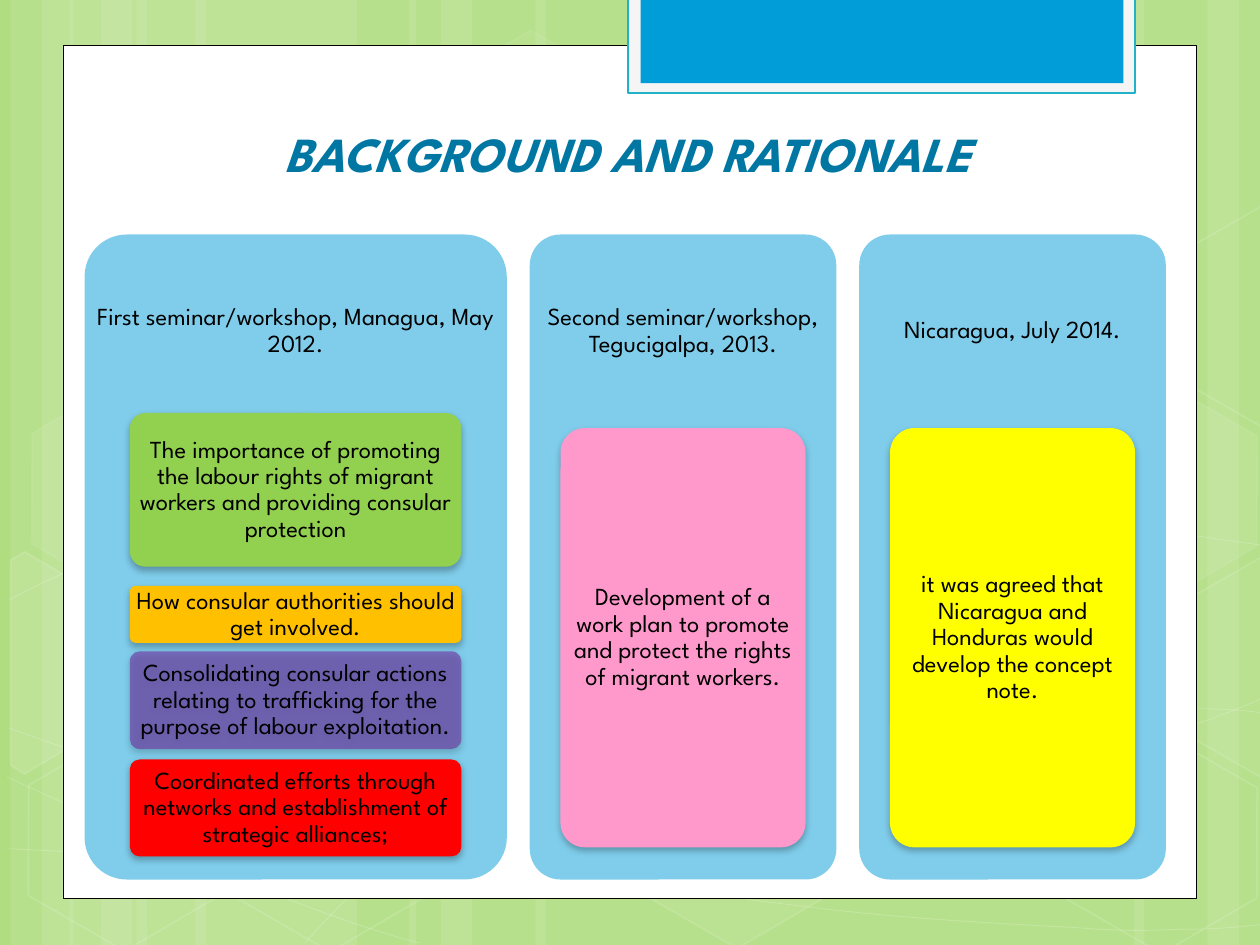
"""Build the background and rationale slide."""
from math import cos, radians, sin
from lxml.etree import SubElement
from pptx import Presentation
from pptx.dml.color import RGBColor
from pptx.enum.shapes import MSO_SHAPE
from pptx.enum.text import MSO_ANCHOR, PP_ALIGN
from pptx.oxml.ns import qn
from pptx.util import Pt

FONT = "League Spartan"
HUES = {
    "page": "AFDD7F", "white": "FFFFFF", "black": "000000", "pale": "F5F5F5",
    "teal": "21B2C9", "blue": "009DD9", "title": "0076A3", "green": "92D050",
    "gold": "FFC000", "plum": "7030A0", "red": "FF0000", "pink": "FF99CC",
    "lemon": "FFFF00",
}
TILT = 30
BANDS = [(78, 126), (6, 36), (24, 60), (111.6, 126), (39.6, 36), (57.6, 60),
         (528, 126), (690, 36), (648, 60), (306, 222), (234, 36), (252, 60)]
CURVES = [
    [(5, 485), (44, 487), (83, 489), (137, 488), (191, 487), (258, 486), (330, 479),
     (402, 472), (504, 458), (570, 444), (636, 431), (703, 409), (725, 397)],
    [(5, 343), (26, 332), (47, 321), (87, 310), (128, 300), (186, 284), (250, 279),
     (314, 274), (392, 273), (471, 279), (550, 284), (682, 307), (725, 312)],
    [(4, 444), (91, 484), (178, 523), (240, 539)],
    [(5, 416), (27, 424), (50, 432), (92, 444), (134, 454), (197, 472), (257, 485),
     (317, 497), (392, 510), (452, 517), (512, 525), (576, 528), (614, 530),
     (652, 533), (662, 531), (680, 531), (699, 531), (712, 529), (725, 528)],
    [(174, 539), (187, 525), (200, 510), (217, 498), (235, 485), (259, 471), (279, 460),
     (300, 450), (312, 446), (338, 438), (364, 431), (413, 421), (438, 416),
     (464, 411), (467, 411), (490, 410), (512, 407), (547, 405), (572, 405),
     (597, 404), (638, 405), (638, 405), (654, 405), (670, 405), (686, 405),
     (699, 405), (711, 406), (718, 407), (722, 408), (724, 407), (724, 408)],
]
HEXES = [(240.5, 26, 4, 8), (358, 424, 6, 12), (8, 425.5, 0, 12), (10, 224.5, 7, 8),
         (125.5, 426, 0, 12), (542, 326, 10, 12), (600.5, 427, 0, 12), (600.5, 226, 7, 8)]
LEFT = [(6, 320), (14, 315), (69, 347), (68, 410), (14, 442), (6, 437)]
RIGHT = [(667, 349), (721, 318), (726, 321), (726, 441), (721, 444), (667, 413)]
CHIPS = [(LEFT, (25.9, 385.2), 0, 10), (RIGHT, (709.2, 374.4), 0, 4),
         (RIGHT, (709.2, 374.4), 200.5, 0)]
COLS = [
    ("First seminar/workshop, Managua, May 2012.", 241.3, 189.4, [
        (236, 87.8, "green", 100, "The importance of promoting the labour rights of "
         "migrant workers and providing consular protection"),
        (334.8, 32.6, "gold", 100, "How consular authorities should get involved."),
        (372.2, 55.8, "plum", 60, "Consolidating consular actions relating to "
         "trafficking for the purpose of labour exploitation."),
        (434, 55.4, "red", 100, "Coordinated efforts through networks and "
         "establishment of strategic alliances;")]),
    ("Second seminar/workshop, Tegucigalpa, 2013.", 175.2, 140, [
        (244.6, 239.6, "pink", 100, "Development of a work plan to promote and "
         "protect the rights of migrant workers.")]),
    ("Nicaragua, July 2014.", 175.2, 140, [
        (244.6, 239.6, "lemon", 100, "it was agreed that Nicaragua and Honduras "
         "would develop the concept note.")]),
]


def tint(fill, node, hue, alpha):
    fill.solid()
    fill.fore_color.rgb = RGBColor.from_string(HUES[hue])
    if alpha < 100:
        clr = node.find(qn("a:solidFill")).find(qn("a:srgbClr"))
        SubElement(clr, qn("a:alpha"), val=str(alpha * 1000))


def paint(shape, hue, alpha=100, edge=None, width=0.5, fade=100):
    shape.shadow.inherit = False
    props = shape.element.spPr
    if hue and alpha:
        tint(shape.fill, props, hue, alpha)
    else:
        shape.fill.background()
    if edge:
        shape.line.width = Pt(width)
        tint(shape.line.fill, props.find(qn("a:ln")), edge, fade)
    else:
        shape.line.fill.background()


def add(slide, kind, box, *style):
    shape = slide.shapes.add_shape(kind, *map(Pt, box))
    paint(shape, *style)
    return shape


def trace(slide, pts, closed, *style):
    pen = slide.shapes.build_freeform(Pt(pts[0][0]), Pt(pts[0][1]))
    pen.add_line_segments([(Pt(x), Pt(y)) for x, y in pts[1:]], close=closed)
    shape = pen.convert_to_shape()
    paint(shape, *style)
    return shape


def bend(shape):
    steps = list(shape.element.iter(qn("a:lnTo")))
    for i in range(0, len(steps), 3):
        first, *rest = steps[i:i + 3]
        curve = SubElement(first.getparent(), qn("a:cubicBezTo"))
        for step in (first, *rest):
            curve.append(step[0])
            step.getparent().remove(step)


def turn(pts, mid, angle):
    c, s = cos(radians(angle)), sin(radians(angle))
    gaps = [(x - mid[0], y - mid[1]) for x, y in pts]
    return [(mid[0] + x * c - y * s, mid[1] + x * s + y * c) for x, y in gaps]


def write(shape, text, size, hue, pads, anchor=MSO_ANCHOR.MIDDLE, strong=False, lead=0.9):
    frame = shape.text_frame
    frame.text = text
    frame.word_wrap = True
    frame.vertical_anchor = anchor
    frame.margin_left = frame.margin_right = Pt(pads[0])
    frame.margin_top = frame.margin_bottom = Pt(pads[1])
    para = frame.paragraphs[0]
    para.alignment = PP_ALIGN.CENTER
    para.line_spacing = lead
    font = para.runs[0].font
    font.name, font.size = FONT, Pt(size)
    font.bold = font.italic = strong
    font.color.rgb = RGBColor.from_string(HUES[hue])


def scene(slide):
    slide.background.fill.solid()
    slide.background.fill.fore_color.rgb = RGBColor.from_string(HUES["page"])
    for x, w in BANDS:
        add(slide, MSO_SHAPE.RECTANGLE, (x, 0, w, 540), "white", 10)
    for knots in CURVES:
        bend(trace(slide, knots, False, None, 0, "white", 0.5, 20))
    for x, y, alpha, fade in HEXES:
        cell = add(slide, MSO_SHAPE.HEXAGON, (x, y, 126, 109.4),
                   "white", alpha, "white", 1, fade)
        cell.adjustments[0] = 0.285
        cell.adjustments[1] = 1.155
        cell.rotation = TILT
    for pts, mid, rise, alpha in CHIPS:
        flat = [(x, y - rise) for x, y in turn(pts, mid, -TILT)]
        trace(slide, flat, True, "white", alpha, "white", 1, 12).rotation = TILT
    add(slide, MSO_SHAPE.RECTANGLE, (36, 26, 648, 487.2), "white", 100, "black", 0.5)
    add(slide, MSO_SHAPE.RECTANGLE, (359, -1.5, 289.5, 54.7), "pale", 100, "teal", 1.25)
    add(slide, MSO_SHAPE.RECTANGLE, (366, -1.5, 276, 49), "blue")


def head(slide, text):
    title = slide.shapes.title
    title.left, title.top, title.width, title.height = map(Pt, (82, 66.6, 553, 41))
    write(title, text, 28, "title", (7.2, 3.6), MSO_ANCHOR.BOTTOM, True, 1.0)
    tree = slide.shapes.element
    tree.remove(title.element)
    tree.append(title.element)


def card(slide, box, hue, alpha, text):
    shape = add(slide, MSO_SHAPE.ROUNDED_RECTANGLE, box, hue, alpha)
    shape.adjustments[0] = 0.1
    glow = shape.element.spPr.find(qn("a:effectLst"))
    shade = SubElement(glow, qn("a:outerShdw"), blurRad=str(Pt(4)), dist=str(Pt(2)),
                       dir="5400000", rotWithShape="0")
    clr = SubElement(shade, qn("a:srgbClr"), val=HUES["black"])
    SubElement(clr, qn("a:alpha"), val="28000")
    write(shape, text, 14, "black", (2.5, 2))


def column(slide, x, width, text, inner, cards):
    top, high = 134, 368.6
    panel = add(slide, MSO_SHAPE.ROUNDED_RECTANGLE, (x, top, width, high), "blue", 50)
    panel.adjustments[0] = 0.1
    label = slide.shapes.add_textbox(*map(Pt, (x, top - 0.2, width, high * 0.3)))
    write(label, text, 14, "black", (4.2, 4.2))
    for y, h, hue, alpha, note in cards:
        card(slide, (x + (width - inner) / 2, y, inner, h), hue, alpha, note)


def main():
    deck = Presentation()
    deck.slide_width, deck.slide_height = Pt(720), Pt(540)
    slide = deck.slides.add_slide(deck.slide_layouts[5])
    scene(slide)
    head(slide, "BACKGROUND AND RATIONALE")
    x, gap = 48.3, 13.1
    for text, width, inner, cards in COLS:
        column(slide, x, width, text, inner, cards)
        x += width + gap
    deck.save("out.pptx")


if __name__ == "__main__":
    main()
